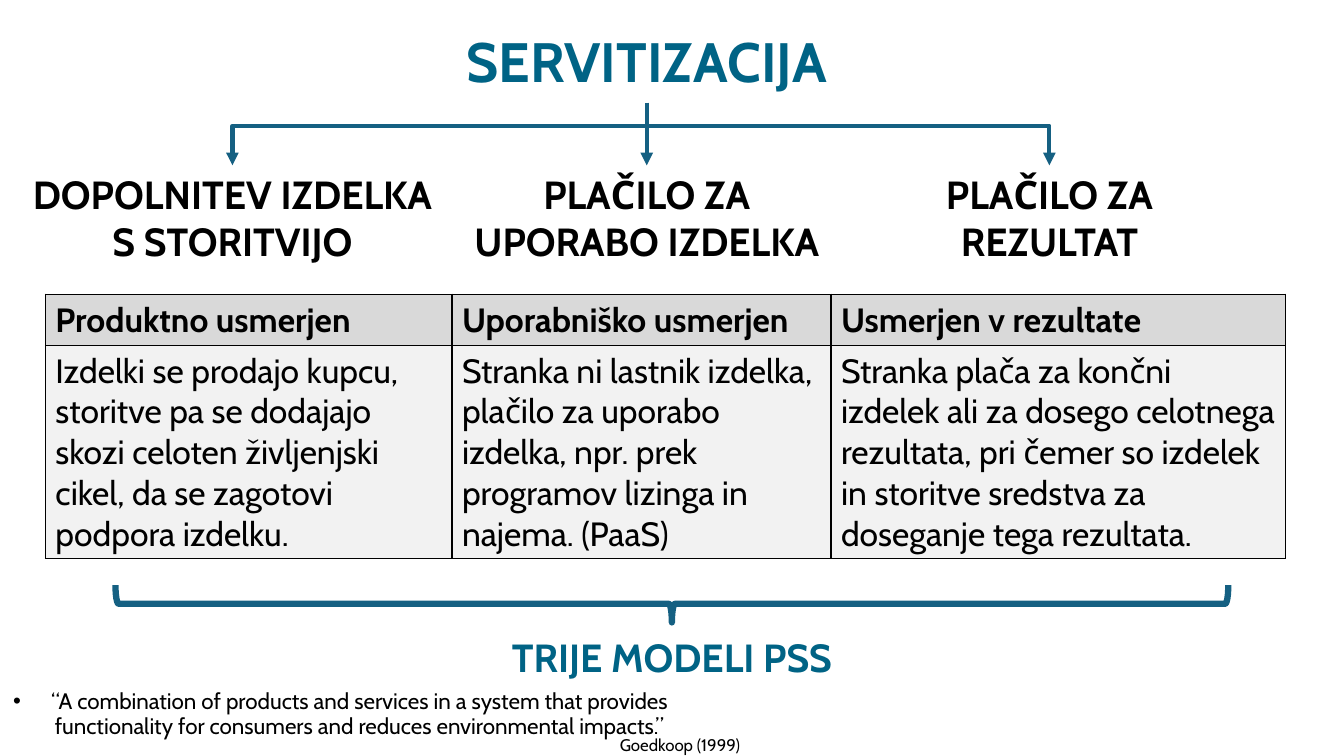
from typing import NamedTuple

from lxml.etree import SubElement
from pptx import Presentation
from pptx.dml.color import RGBColor
from pptx.enum.shapes import MSO_CONNECTOR as Connector, MSO_SHAPE as Shape
from pptx.enum.text import MSO_ANCHOR as Anchor, MSO_AUTO_SIZE as AutoSize, PP_ALIGN as Align
from pptx.oxml.ns import qn
from pptx.util import Inches, Pt

WIDTH, HEIGHT = Inches(13.33), Inches(7.5)
COLUMN, ROW = WIDTH / 100, HEIGHT / 100
FONT = "Cabin"
COLORS = {
    "heading": "006385",
    "line": "156082",
    "text": "000000",
    "header": "D9D9D9",
    "body": "F2F2F2",
}
MODELS = [
    ("DOPOLNITEV IZDELKA\nS STORITVIJO", 17.29, 41.03),
    ("PLAČILO ZA\nUPORABO IZDELKA", 48.12, 41.03),
    ("PLAČILO ZA\nREZULTAT", 78.08, 31.2),
]
TABLE_COLUMNS = [30.25, 28.2, 33.8]
TABLE_ROWS = [6.8, 28.2]
TABLE_TEXT = [
    ["Produktno usmerjen", "Uporabniško usmerjen", "Usmerjen v rezultate"],
    [
        "Izdelki se prodajo kupcu, storitve pa se dodajajo skozi celoten "
        "življenjski cikel, da se zagotovi podpora izdelku.",
        "Stranka ni lastnik izdelka, plačilo za uporabo izdelka, npr. prek "
        "programov lizinga in najema. (PaaS)",
        "Stranka plača za končni izdelek ali za dosego celotnega rezultata, pri "
        "čemer so izdelek in storitve sredstva za doseganje tega rezultata.",
    ],
]
QUOTE = (
    "“A combination of products and services in a system that provides "
    "functionality for consumers and reduces environmental impacts.”"
)


class Box(NamedTuple):
    left: float
    top: float
    width: float
    height: float

    def emu(self):
        return (round(self.left * COLUMN), round(self.top * ROW),
                round(self.width * COLUMN), round(self.height * ROW))


def color(name):
    return RGBColor.from_string(COLORS[name])


def write(frame, text, size, bold=False, shade="text", align=Align.CENTER, spacing=None):
    frame.text = text
    frame.word_wrap = True
    for paragraph in frame.paragraphs:
        paragraph.alignment = align
        paragraph.line_spacing = spacing
        font = paragraph.font
        font.name, font.size, font.bold = FONT, Pt(size), bold
        font.color.rgb = color(shade)


def place(shape, box):
    shape.left, shape.top, shape.width, shape.height = box.emu()


def add_label(slide, box, text, size, **style):
    label = slide.shapes.add_textbox(*box.emu())
    write(label.text_frame, text, size, **style)
    return label


def add_title(slide, box):
    title = slide.shapes.title
    place(title, box)
    title.text_frame.vertical_anchor = Anchor.MIDDLE
    title.text_frame.auto_size = AutoSize.NONE
    write(title.text_frame, "SERVITIZACIJA", 39.6, True, "heading", spacing=0.9)
    return title


def style_arrow(connector):
    connector.line.color.rgb = color("line")
    connector.line.width = Pt(3)
    line = connector.line._get_or_add_ln()
    SubElement(line, qn("a:tailEnd"), type="triangle")
    SubElement(connector._element.spPr, qn("a:effectLst"))


def add_elbow(slide, start, end):
    middle_x, middle_y = (start[0] + end[0]) / 2, (start[1] + end[1]) / 2
    half_drop, half_span = (end[1] - start[1]) / 2, abs(end[0] - start[0]) / 2
    rightward = end[0] > start[0]
    side = half_drop if rightward else -half_drop
    connector = slide.shapes.add_connector(
        Connector.ELBOW, round(middle_x + side), round(middle_y - half_span),
        round(middle_x - side), round(middle_y + half_span))
    properties = connector._element.spPr
    properties.find(qn("a:xfrm")).set("rot", str((270 if rightward else 90) * 60000))
    geometry = properties.find(qn("a:prstGeom"))
    adjustments = geometry.find(qn("a:avLst"))
    if adjustments is None:
        adjustments = SubElement(geometry, qn("a:avLst"))
    SubElement(adjustments, qn("a:gd"), name="adj1", fmla="val 36800")
    style_arrow(connector)


def add_models(slide, box, title):
    start = (title.left + title.width // 2, title.top + title.height)
    for index, (text, center, width) in enumerate(MODELS):
        label_box = Box(box.left + center - width / 2, box.top, width, box.height)
        label = add_label(slide, label_box, text, 28, bold=True)
        end = (label.left + label.width // 2, label.top)
        if index == 1:
            arrow = slide.shapes.add_connector(Connector.STRAIGHT, *start, *end)
            arrow.begin_connect(title, 2)
            arrow.end_connect(label, 0)
            style_arrow(arrow)
        else:
            add_elbow(slide, start, end)


def add_borders(cell):
    properties = cell._tc.get_or_add_tcPr()
    for position, side in enumerate(("lnL", "lnR", "lnT", "lnB")):
        border = properties.makeelement(qn(f"a:{side}"), {"w": str(Pt(1))})
        fill = SubElement(border, qn("a:solidFill"))
        SubElement(fill, qn("a:srgbClr"), val=COLORS["text"])
        properties.insert(position, border)


def add_model_table(slide, box):
    table = slide.shapes.add_table(len(TABLE_ROWS), len(TABLE_COLUMNS), *box.emu()).table
    for column, width in zip(table.columns, TABLE_COLUMNS):
        column.width = round(width * COLUMN)
    for row, height, texts, shade in zip(table.rows, TABLE_ROWS, TABLE_TEXT, ("header", "body")):
        row.height = round(height * ROW)
        for cell, text in zip(row.cells, texts):
            cell.fill.solid()
            cell.fill.fore_color.rgb = color(shade)
            cell.vertical_anchor = Anchor.MIDDLE
            write(cell.text_frame, text, 24, shade == "header", align=Align.LEFT)
            add_borders(cell)


def add_brace(slide, box):
    left, top, width, height = box.emu()
    brace = slide.shapes.add_shape(
        Shape.RIGHT_BRACE, left + (width - height) // 2, top + (height - width) // 2,
        height, width)
    brace.rotation = 90
    brace.shadow.inherit = False
    brace.fill.background()
    brace.line.color.rgb = color("line")
    brace.line.width = Pt(4.5)


def add_summary(slide, box):
    add_brace(slide, Box(box.left, box.top, box.width, 4.93))
    label_box = Box(box.left + 20.89, box.top + 5.67, 41.03, 7.6)
    add_label(slide, label_box, "TRIJE MODELI PSS", 28, bold=True, shade="heading")


def add_quote(slide, box):
    quote = slide.placeholders[1]
    place(quote, box)
    quote.text_frame.auto_size = AutoSize.NONE
    quote.text_frame.text = QUOTE
    paragraph = quote.text_frame.paragraphs[0]
    properties = paragraph._p.get_or_add_pPr()
    properties.set("marL", "0")
    properties.set("indent", "0")
    SubElement(properties, qn("a:buNone"))
    write(quote.text_frame, QUOTE, 16, spacing=0.9)
    paragraph.space_before = Pt(0)
    source_box = Box(box.left + 46.96, box.top + 5.86, 50.25, 4)
    add_label(slide, source_box, "Goedkoop (1999)", 12, align=Align.LEFT)


def build_servitization_slide(presentation):
    slide = presentation.slides.add_slide(presentation.slide_layouts[1])
    title = add_title(slide, Box(2.03, 3.47, 92.18, 10.13))
    add_models(slide, Box(0, 21.87, 100, 13.87), title)
    add_model_table(slide, Box(3.38, 38.93, sum(TABLE_COLUMNS), sum(TABLE_ROWS)))
    add_summary(slide, Box(8.59, 77.4, 82.8, 13.27))
    add_quote(slide, Box(-1.58, 90.67, 53.85, 14.67))


def main():
    presentation = Presentation()
    presentation.slide_width, presentation.slide_height = WIDTH, HEIGHT
    build_servitization_slide(presentation)
    presentation.save("out.pptx")


if __name__ == "__main__":
    main()
